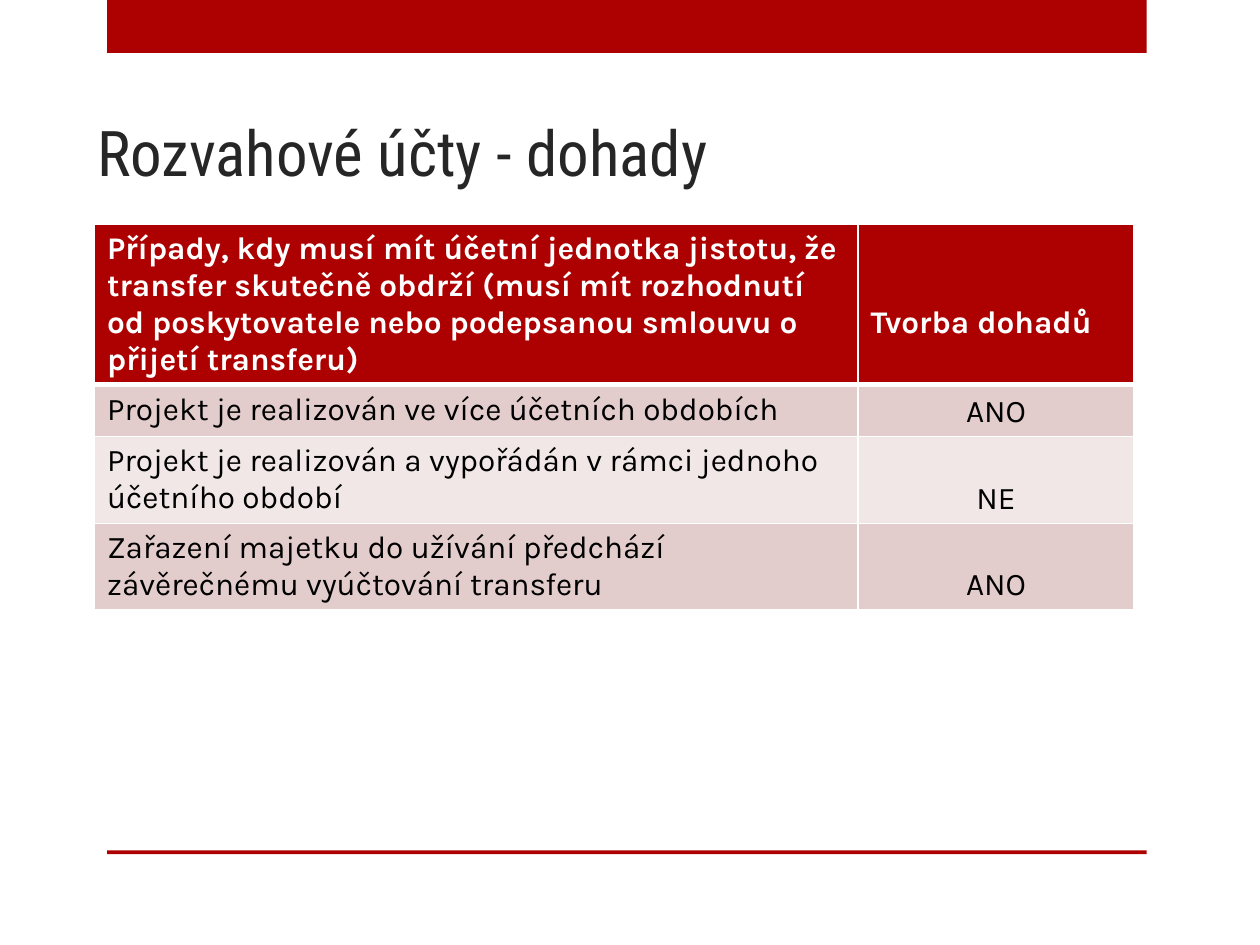
import pptx
import pptx.util
import pptx.dml.color
import pptx.enum.shapes
import pptx.enum.text
import pptx.oxml
import pptx.oxml.ns

Inches = pptx.util.Inches
Pt = pptx.util.Pt
ANCHOR = pptx.enum.text.MSO_ANCHOR
ALIGN = pptx.enum.text.PP_ALIGN

COLORS = {
    "red": "AD0101",
    "title": "262626",
    "white": "FFFFFF",
    "black": "000000",
    "band_dark": "E3CCCC",
    "band_light": "F1E7E7",
}
COL_WIDTHS = [6.06, 2.19]
ROW_HEIGHTS = [1.27, 0.41, 0.69, 0.69]
ROWS = [
    ("Případy, kdy musí mít účetní jednotka jistotu, že transfer skutečně obdrží "
     "(musí mít rozhodnutí od poskytovatele nebo podepsanou smlouvu o přijetí transferu)",
     "Tvorba dohadů"),
    ("Projekt je realizován ve více účetních obdobích", "ANO"),
    ("Projekt je realizován a vypořádán v rámci jednoho účetního období", "NE"),
    ("Zařazení majetku do užívání předchází závěrečnému vyúčtování transferu", "ANO"),
]


def rgb(name):
    return pptx.dml.color.RGBColor.from_string(COLORS[name])


def set_attrs(obj, values):
    for name, value in values.items():
        setattr(obj, name, value)


def set_text(tf, text, color, font, align=ALIGN.LEFT):
    p = tf.paragraphs[0]
    p.alignment = align
    r = p.add_run()
    r.text = text
    set_attrs(r.font, font)
    r.font.color.rgb = rgb(color)


def add_bar(s, top, height):
    sp = s.shapes.add_shape(pptx.enum.shapes.MSO_SHAPE.RECTANGLE,
                            Inches(0.85), Inches(top), Inches(8.25), Inches(height))
    sp.shadow.inherit = False
    sp.fill.solid()
    sp.fill.fore_color.rgb = rgb("red")
    sp.line.fill.background()


def add_title(s, text):
    sp = s.shapes.title
    set_attrs(sp, {"left": Inches(0.67), "top": Inches(0.6),
                   "width": Inches(7.5), "height": Inches(0.95)})
    set_attrs(sp.text_frame, {"vertical_anchor": ANCHOR.BOTTOM, "word_wrap": True,
                              "auto_size": pptx.enum.text.MSO_AUTO_SIZE.NONE})
    set_text(sp.text_frame, text, "title", {"name": "Roboto Condensed", "size": Pt(36)})


def set_borders(cell, widths):
    tcPr = cell._tc.get_or_add_tcPr()
    for i, (side, width) in enumerate(widths.items()):
        tcPr.insert(i, pptx.oxml.parse_xml(
            f'<a:{side} {pptx.oxml.ns.nsdecls("a")} w="{Pt(width)}"><a:solidFill>'
            f'<a:srgbClr val="{COLORS["white"]}"/></a:solidFill></a:{side}>'))


def format_cell(cell, text, row, col):
    header = row == 0
    fill = "red" if header else ("band_light", "band_dark")[row % 2]
    cell.fill.solid()
    cell.fill.fore_color.rgb = rgb(fill)
    cell.vertical_anchor = ANCHOR.BOTTOM if col else ANCHOR.TOP
    if header and col:
        cell.margin_bottom = Inches(0.34)
    set_borders(cell, {"lnL": 1, "lnR": 1, "lnT": 3 if row == 1 else 1,
                       "lnB": 3 if header else 1})
    set_text(cell.text_frame, text, "white" if header else "black",
             {"name": "Karla", "size": Pt(18), "bold": header},
             ALIGN.CENTER if col and not header else ALIGN.LEFT)


def add_table(s):
    table = s.shapes.add_table(len(ROWS), len(COL_WIDTHS), Inches(0.75), Inches(1.78),
                               Inches(sum(COL_WIDTHS)), Inches(sum(ROW_HEIGHTS))).table
    for column, width in zip(table.columns, COL_WIDTHS):
        column.width = Inches(width)
    for i, (height, texts) in enumerate(zip(ROW_HEIGHTS, ROWS)):
        table.rows[i].height = Inches(height)
        for j, text in enumerate(texts):
            format_cell(table.cell(i, j), text, i, j)


def main():
    prs = pptx.Presentation()
    set_attrs(prs, {"slide_width": Inches(10), "slide_height": Inches(7.5)})
    s = prs.slides.add_slide(prs.slide_layouts[5])
    add_bar(s, 0, 0.42)
    add_bar(s, 6.75, 0.03)
    add_title(s, "Rozvahové účty - dohady")
    add_table(s)
    prs.save("out.pptx")


if __name__ == "__main__":
    main()
